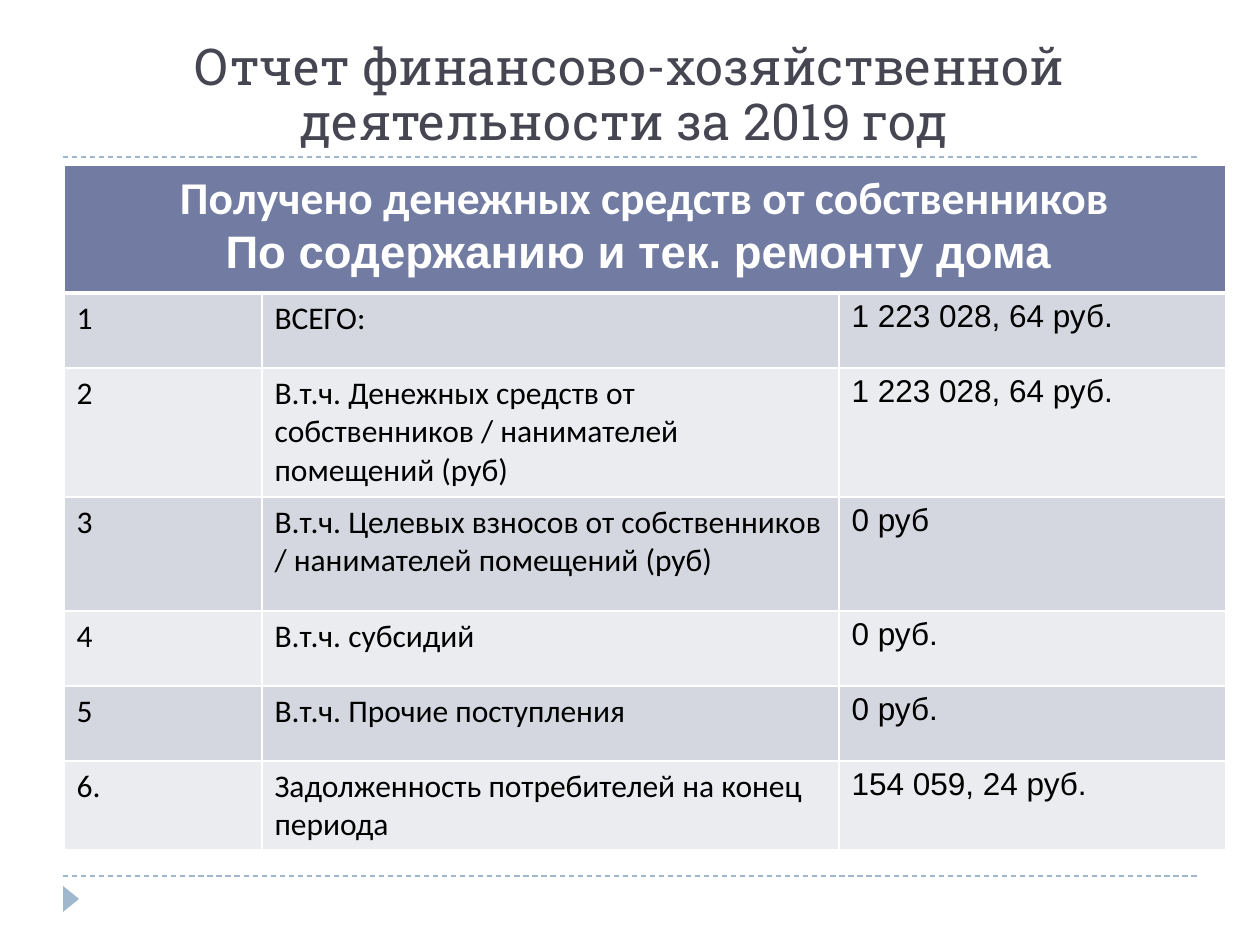
from lxml.etree import SubElement
from pptx import Presentation
from pptx.dml.color import RGBColor
from pptx.enum.dml import MSO_LINE_DASH_STYLE as Dash
from pptx.enum.shapes import MSO_CONNECTOR as Connector, MSO_SHAPE as Shape
from pptx.enum.text import MSO_ANCHOR as Anchor, PP_ALIGN as Align
from pptx.oxml.ns import qn
from pptx.util import Pt

PX = 914400 // 126
ACCENT = "9FB8CD"
ROW_FILLS = ["D5D7E0", "EBECF0"]


def style(span, font, size, color, bold=False):
    span.font.name = font
    span.font.size = Pt(size)
    span.font.bold = bold
    span.font.color.rgb = RGBColor.from_string(color)


def paint_cell(cell, color, top, bottom):
    """Fill a cell and give it white borders; top and bottom are in points."""
    props = cell._tc.get_or_add_tcPr()
    for side, width in (("L", 1), ("R", 1), ("T", top), ("B", bottom)):
        border = SubElement(props, qn(f"a:ln{side}"), w=str(Pt(width)))
        fill = SubElement(border, qn("a:solidFill"))
        SubElement(fill, qn("a:srgbClr"), val="FFFFFF")
    cell.fill.solid()
    cell.fill.fore_color.rgb = RGBColor.from_string(color)


deck = Presentation()
deck.slide_width = 1260 * PX
deck.slide_height = 945 * PX
page = deck.slides.add_slide(deck.slide_layouts[6])

# Dashed rules and corner marker
for y in (876, 157):
    rule = page.shapes.add_connector(Connector.STRAIGHT, 63 * PX, y * PX, 1197 * PX, y * PX)
    rule.line.color.rgb = RGBColor.from_string(ACCENT)
    rule.line.width = Pt(0.75)
    rule.line.dash_style = Dash.DASH
    SubElement(rule._element.spPr, qn("a:effectLst"))

marker = page.shapes.add_shape(Shape.ISOSCELES_TRIANGLE, 58 * PX, 891 * PX, 26 * PX, 16 * PX)
marker.rotation = 90
marker.shadow.inherit = False
marker.fill.solid()
marker.fill.fore_color.rgb = RGBColor.from_string(ACCENT)
marker.line.fill.background()

# Title
title = page.shapes.add_textbox(63 * PX, 32 * PX, 1134 * PX, 126 * PX)
title.text_frame.word_wrap = True
title.text_frame.vertical_anchor = Anchor.BOTTOM
para = title.text_frame.paragraphs[0]
para.alignment = Align.CENTER
para.line_spacing = 0.9
for text, font in (
    ("Отчет финансово-хозяйственной деятельности за 201", "Roboto Slab"),
    ("9", "Arial"),
    (" год ", "Roboto Slab"),
):
    span = para.add_run()
    span.text = text
    style(span, font, 29, "464653")

# Table of receipts
heading = [
    ("Получено денежных средств от собственников", "Calibri"),
    ("По содержанию и тек. ремонту дома ", "Arial"),
]
receipts = [
    ("1", "ВСЕГО:", "1 223 028, 64 руб."),
    ("2", "В.т.ч. Денежных средств от собственников / нанимателей помещений (руб)",
     "1 223 028, 64 руб."),
    ("3", "В.т.ч. Целевых взносов от собственников / нанимателей помещений (руб)", "0 руб"),
    ("4", "В.т.ч. субсидий", "0 руб."),
    ("5", "В.т.ч. Прочие поступления", "0 руб."),
    ("6.", "Задолженность потребителей на конец периода", "154 059, 24 руб."),
]
widths = [198, 577, 387]
heights = [128, 75, 129, 114, 75, 75, 89]
table = page.shapes.add_table(
    len(heights), len(widths), 64 * PX, 165 * PX, sum(widths) * PX, sum(heights) * PX
).table
for column, width in zip(table.columns, widths):
    column.width = width * PX
for row, height in zip(table.rows, heights):
    row.height = height * PX

for cell in table.rows[0].cells:
    paint_cell(cell, "727CA3", 1, 3)
header = table.cell(0, 0)
header.merge(table.cell(0, 2))
header.text_frame.text = "\n".join(text for text, font in heading)
for para, (text, font) in zip(header.text_frame.paragraphs, heading):
    para.alignment = Align.CENTER
    style(para.runs[0], font, 26, "FFFFFF", bold=True)

for r, receipt in enumerate(receipts, start=1):
    for c, (text, font) in enumerate(zip(receipt, ("Calibri", "Calibri", "Arial"))):
        cell = table.cell(r, c)
        paint_cell(cell, ROW_FILLS[(r - 1) % 2], 3 if r == 1 else 1, 1)
        cell.text_frame.text = text
        style(cell.text_frame.paragraphs[0].runs[0], font, 18, "000000")

deck.save("out.pptx")
